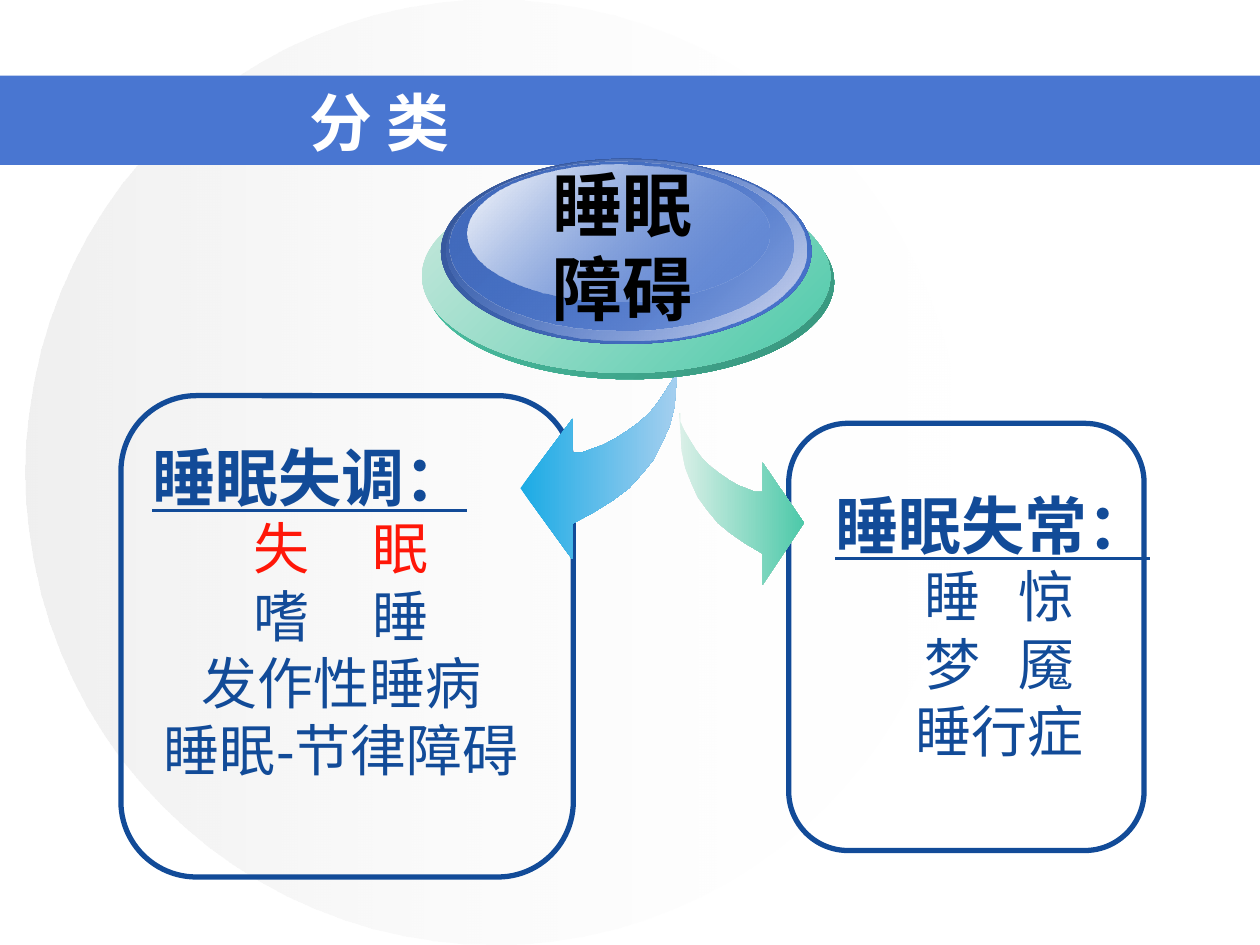
from pptx import Presentation
from pptx.dml.color import RGBColor
from pptx.enum.shapes import MSO_SHAPE
from pptx.enum.text import MSO_ANCHOR, PP_ALIGN
from pptx.oxml.ns import qn
from pptx.util import Inches, Pt

OVAL, BAR, ROUNDED = MSO_SHAPE.OVAL, MSO_SHAPE.RECTANGLE, MSO_SHAPE.ROUNDED_RECTANGLE
LEFT, CENTER = PP_ALIGN.LEFT, PP_ALIGN.CENTER
MIDDLE, TOP = MSO_ANCHOR.MIDDLE, MSO_ANCHOR.TOP

WHITE = RGBColor(0xFF, 0xFF, 0xFF)
BLACK = RGBColor(0, 0, 0)
GREY = RGBColor(0xDD, 0xDD, 0xDD)
BLUE = RGBColor(0x49, 0x76, 0xD1)
MID_BLUE = RGBColor(0x42, 0x6B, 0xBD)
DARK_BLUE = RGBColor(0x34, 0x54, 0x96)
PALE_BLUE = RGBColor(0xD6, 0xDC, 0xF0)
NAVY = RGBColor(0x12, 0x4B, 0x98)
RED = RGBColor(0xFF, 0x17, 0x08)
SKY = RGBColor(0x1B, 0xAB, 0xE5)
PALE_SKY = RGBColor(0xA5, 0xCF, 0xEF)
GREEN = RGBColor(0x4D, 0xC9, 0xA9)
DARK_GREEN = RGBColor(0x38, 0x93, 0x7C)
PALE_GREEN = RGBColor(0xCA, 0xE9, 0xDE)
MIST_GREEN = RGBColor(0xDB, 0xF0, 0xE8)

TITLE = "分 类"
TOPIC = ["睡眠", "障碍"]

# Each disc: box, then (colour, opacity in percent) at both ends
DISCS = [
    ((3.38, 1.47, 3.24, 1.54), (GREEN, 100), (DARK_GREEN, 100)),
    ((3.35, 1.42, 3.24, 1.54), (PALE_GREEN, 100), (GREEN, 100)),
    ((3.5, 1.26, 2.94, 1.47), (DARK_BLUE, 100), (BLUE, 100)),
    ((3.54, 1.27, 2.86, 1.43), (BLUE, 0), (PALE_BLUE, 100)),
    ((3.57, 1.28, 2.73, 1.34), (MID_BLUE, 100), (BLUE, 48)),
    ((3.71, 1.31, 2.4, 1.08), (WHITE, 100), (BLUE, 38)),
]

DISORDERS = {
    "frame": (0.96, 3.14, 3.59, 3.82),
    "text": (1.11, 3.43, 3.2, 2.86),
    "heading": "睡眠失调：",
    "items": [("失     眠", RED), ("嗜     睡", NAVY),
              ("发作性睡病", NAVY), ("睡眠-节律障碍", NAVY)],
    "arrow": (5.38, 2.87, -1.25, 1.57),
    "colours": (SKY, PALE_SKY),
}
PARASOMNIAS = {
    "frame": (6.26, 3.36, 2.82, 3.39),
    "text": (6.53, 3.81, 2.81, 2.3),
    "heading": "睡眠失常：",
    "items": [("睡   惊", NAVY), ("梦   魇", NAVY), ("睡行症", NAVY)],
    "arrow": (5.39, 3.28, 0.99, 1.36),
    "colours": (MIST_GREEN, GREEN),
}

# Curved arrow outline in percent of its width and height, tail first
ARROW = [
    (0, 0), (1, 11), (2, 22), (5, 32), (10, 41), (15, 49), (22, 56), (31, 64),
    (41, 70), (53, 76), (67, 82), (67, 100), (100, 64), (67, 29), (67, 46),
    (61, 46), (54, 44), (47, 42), (40, 39), (32, 35), (25, 31), (18, 26),
    (13, 21), (8, 15), (4, 10), (1, 5), (1, 0),
]


def set_gradient(s, ends, angle=0):
    s.fill.gradient()
    s.fill.gradient_angle = -angle % 360
    for stop, (colour, _) in zip(s.fill.gradient_stops, ends):
        stop.color.rgb = colour
    for clr, (_, opacity) in zip(s._element.spPr.iter(qn("a:srgbClr")), ends):
        if opacity < 100:
            alpha = clr.makeelement(qn("a:alpha"), {"val": str(opacity * 1000)})
            clr.append(alpha)
    s.line.fill.background()
    s.shadow.inherit = False


def add_shape(slide, kind, box):
    s = slide.shapes.add_shape(kind, *map(Inches, box))
    s.shadow.inherit = False
    return s


def add_text(slide, box, lines, font="Arial", anchor=TOP, wrap=True):
    tf = slide.shapes.add_textbox(*map(Inches, box)).text_frame
    tf.word_wrap = wrap
    tf.vertical_anchor = anchor
    tf.text = "\n".join(line[0] for line in lines)
    for p, (_, size, colour, bold, underline, align) in zip(tf.paragraphs, lines):
        p.alignment = align
        for r in p.runs:
            r.font.name = font
            r.font.size = Pt(size)
            r.font.color.rgb = colour
            r.font.bold = bold
            r.font.underline = underline


def add_arrow(slide, box, colours):
    x, y, w, h = box
    points = [(Inches(x + w * px / 100), Inches(y + h * py / 100)) for px, py in ARROW]
    builder = slide.shapes.build_freeform(*points[0])
    builder.add_line_segments(points[1:], close=True)
    set_gradient(builder.convert_to_shape(), [(c, 100) for c in colours])


def add_panel(slide, panel):
    frame = add_shape(slide, ROUNDED, panel["frame"])
    frame.fill.background()
    frame.line.color.rgb = NAVY
    frame.line.width = Pt(3)
    lines = [(panel["heading"], 36, NAVY, True, True, LEFT)]
    lines += [(item, 32, colour, False, False, CENTER) for item, colour in panel["items"]]
    add_text(slide, panel["text"], lines)
    add_arrow(slide, panel["arrow"], panel["colours"])


def main():
    prs = Presentation()
    prs.slide_width, prs.slide_height = Inches(10), Inches(7.5)
    slide = prs.slides.add_slide(prs.slide_layouts[6])

    backdrop = add_shape(slide, OVAL, (0.2, 0, 7.44, 7.5))
    set_gradient(backdrop, [(GREY, 44), (WHITE, 0)])
    band = add_shape(slide, BAR, (0, 0.6, 10, 0.71))
    band.fill.solid()
    band.fill.fore_color.rgb = BLUE
    band.line.fill.background()
    add_text(slide, (0, 0.6, 6.02, 0.73), [(TITLE, 36, WHITE, True, False, CENTER)],
             font="DejaVu Sans", anchor=MIDDLE)

    add_panel(slide, DISORDERS)
    for box, *ends in DISCS:
        set_gradient(add_shape(slide, OVAL, box), ends, angle=45)
    add_text(slide, (4.28, 1.23, 1.32, 1.43),
             [(line, 40, BLACK, True, False, CENTER) for line in TOPIC], wrap=False)
    add_panel(slide, PARASOMNIAS)

    prs.save("out.pptx")


if __name__ == "__main__":
    main()
